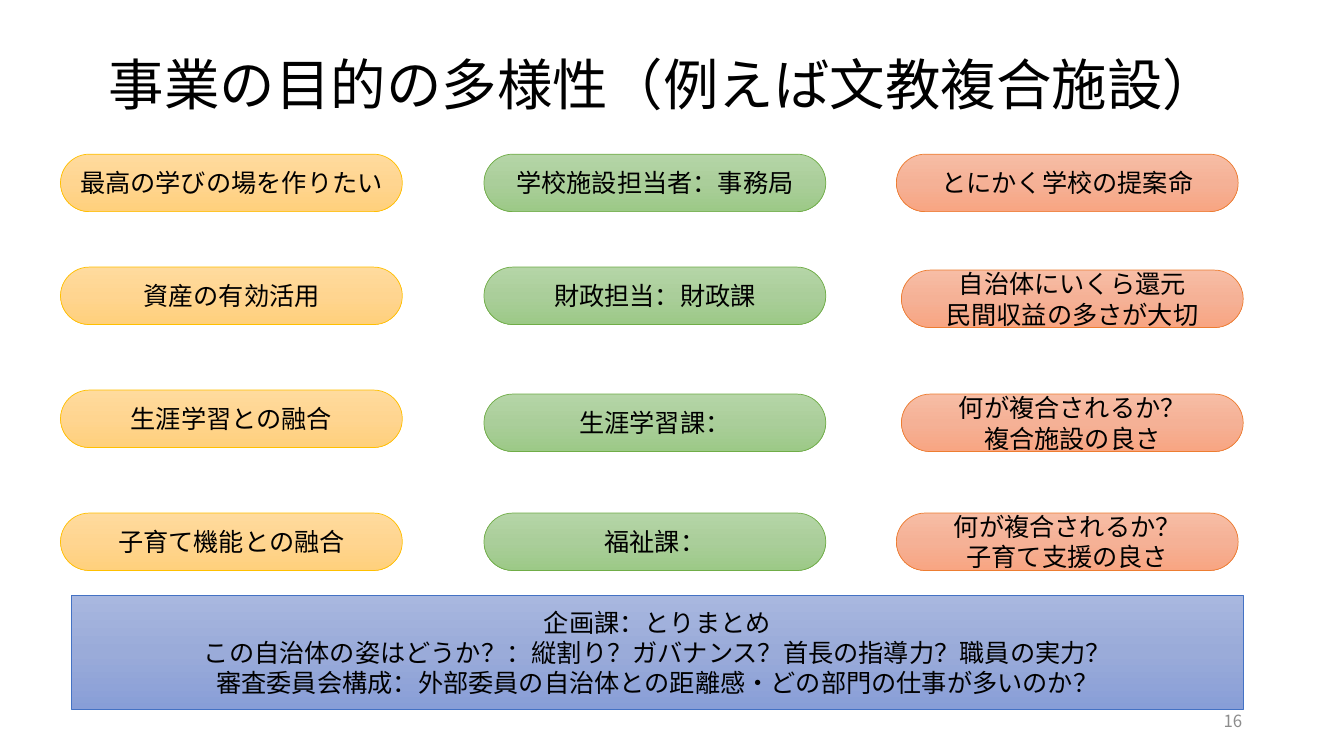
import copy

import pptx
import pptx.dml.color
import pptx.enum.shapes
import pptx.enum.text
import pptx.oxml
import pptx.oxml.ns
import pptx.util
from pptx.util import Inches

ALIGN = pptx.enum.text.PP_ALIGN
KIND = pptx.enum.shapes.MSO_SHAPE

# Each style: line colour, then gradient from top to bottom
GOLD = ("FFC000", ["FFDB9E", "FFD590", "FFD07C"])
GREEN = ("70AD47", ["B5D5A7", "AACE9A", "9CC987"])
CORAL = ("ED7D31", ["F7BDA5", "F5B196", "F8A582"])
BLUE = ("4472C4", ["A8B7DF", "9AABD9", "889ED7"])

# Each column: style, then (left, top, text) per pill
COLUMNS = [
    (GOLD, [
        (0.6, 1.53, "最高の学びの場を作りたい"),
        (0.6, 2.65, "資産の有効活用"),
        (0.6, 3.87, "生涯学習との融合"),
        (0.6, 5.09, "子育て機能との融合"),
    ]),
    (GREEN, [
        (4.8, 1.53, "学校施設担当者：事務局"),
        (4.8, 2.65, "財政担当：財政課"),
        (4.8, 3.91, "生涯学習課："),
        (4.8, 5.09, "福祉課："),
    ]),
    (CORAL, [
        (8.89, 1.53, "とにかく学校の提案命"),
        (8.94, 2.68, "自治体にいくら還元\n民間収益の多さが大切"),
        (8.94, 3.91, "何が複合されるか？\n複合施設の良さ"),
        (8.89, 5.09, "何が複合されるか？\n子育て支援の良さ"),
    ]),
]

SUMMARY = """企画課：とりまとめ
この自治体の姿はどうか？：縦割り？ガバナンス？首長の指導力？職員の実力？
審査委員会構成：外部委員の自治体との距離感・どの部門の仕事が多いのか？"""


def color(code):
    return pptx.dml.color.RGBColor.from_string(code)


class Page:
    """Holds the text style and the slide being filled."""

    font = "Noto Sans CJK JP"
    ink = "000000"

    def __init__(self, deck):
        self.slide = deck.slides.add_slide(deck.slide_layouts[5])

    def label(self, shape, text, size, align, pitch, ink=ink):
        """Set and format text; pitch is the line spacing."""
        frame = shape.text_frame
        frame.text = text
        frame.word_wrap = True
        frame.auto_size = pptx.enum.text.MSO_AUTO_SIZE.NONE
        frame.vertical_anchor = pptx.enum.text.MSO_ANCHOR.MIDDLE
        for para in frame.paragraphs:
            para.alignment = align
            para.line_spacing = pitch
            for run in para.runs:
                run.font.size = pptx.util.Pt(size)
                run.font.name = self.font
                run.font.color.rgb = color(ink)
                east = pptx.oxml.parse_xml(
                    f'<a:ea {pptx.oxml.ns.nsdecls("a")} typeface="{self.font}"/>')
                run.font._element.append(east)

    def title(self, text, *box):
        shape = self.slide.shapes.title
        shape.left, shape.top, shape.width, shape.height = map(Inches, box)
        self.label(shape, text, 39.6, ALIGN.LEFT, 0.9)

    def number(self, text, *box):
        shape = self.slide.shapes.add_textbox(*map(Inches, box))
        self.label(shape, text, 12, ALIGN.RIGHT, 1.0, "8C8C8C")

    def shade(self, shape, codes):
        """Fill with three evenly spaced colours from top to bottom."""
        fill = shape.fill
        fill.gradient()
        fill.gradient_angle = 270
        first = shape._element.spPr.find(".//" + pptx.oxml.ns.qn("a:gs"))
        first.addnext(copy.deepcopy(first))
        for i, (stop, code) in enumerate(zip(fill.gradient_stops, codes)):
            stop.position = i / 2
            stop.color.rgb = color(code)

    def block(self, kind, style, text, *box):
        edge, codes = style
        shape = self.slide.shapes.add_shape(kind, *map(Inches, box))
        shape.shadow.inherit = False
        self.shade(shape, codes)
        shape.line.color.rgb = color(edge)
        shape.line.width = pptx.util.Pt(0.5)
        frame = shape.text_frame
        frame.margin_left = frame.margin_right = Inches(0.05)
        self.label(shape, text, 18, ALIGN.CENTER, pptx.util.Pt(21.6))
        return shape

    def pill(self, style, text, left, top):
        shape = self.block(KIND.ROUNDED_RECTANGLE, style, text,
                           left, top, 3.39, 0.57)
        shape.adjustments[0] = 0.5


def main():
    deck = pptx.Presentation()
    deck.slide_width = Inches(13.33)
    deck.slide_height = Inches(7.5)
    page = Page(deck)
    page.title("事業の目的の多様性（例えば文教複合施設）", 0.98, 0.62, 11.43, 0.5)
    page.number("16", 9.42, 6.95, 3, 0.4)
    for style, pills in COLUMNS:
        for left, top, text in pills:
            page.pill(style, text, left, top)
    page.block(KIND.RECTANGLE, BLUE, SUMMARY, 0.71, 5.91, 11.62, 1.13)
    deck.save("out.pptx")


if __name__ == "__main__":
    main()
